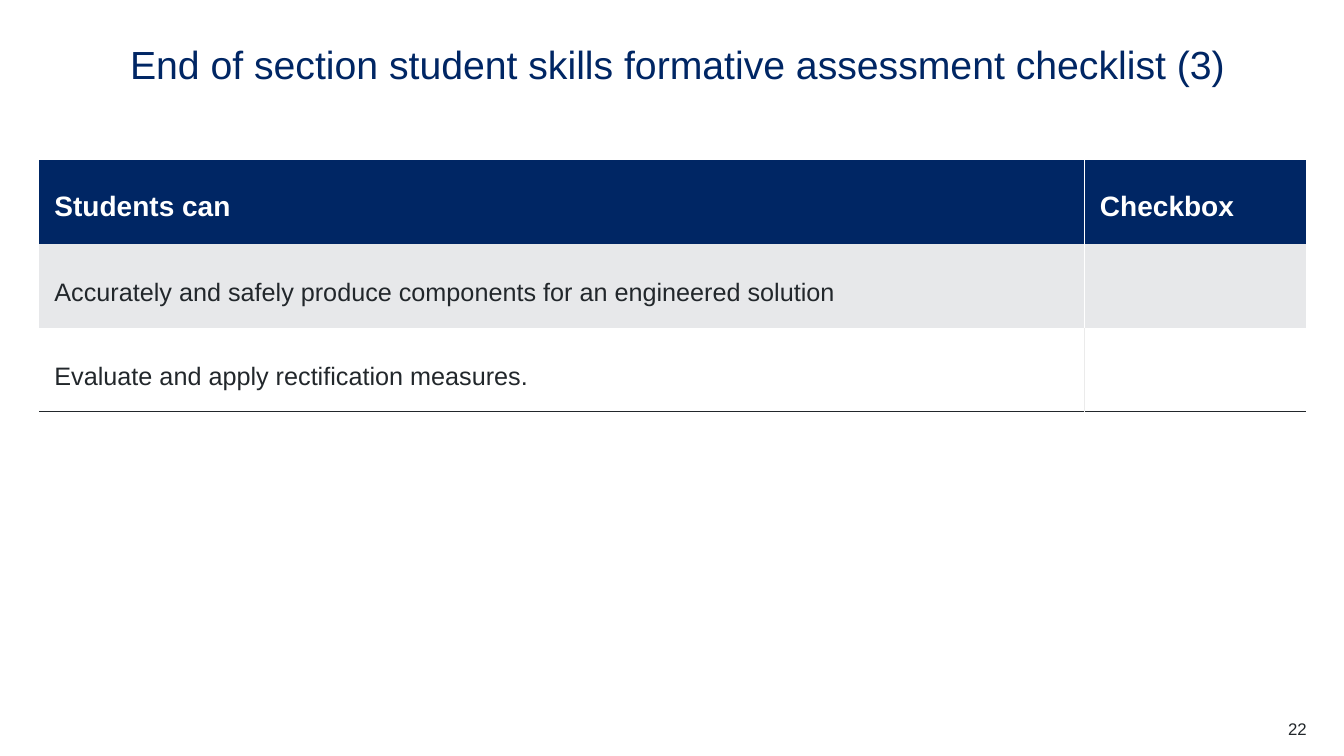
import dataclasses

import pptx
import pptx.dml.color
import pptx.enum.text
import pptx.oxml
import pptx.oxml.ns
import pptx.util
from pptx.util import Inches


@dataclasses.dataclass(frozen=True)
class Theme:
    font: str = "Arial"
    navy: str = "002664"
    ink: str = "22272B"
    band: str = "E7E8EA"
    rule: str = "EBEBEB"
    white: str = "FFFFFF"
    title_size: int = 28
    header_size: int = 20
    body_size: int = 18
    number_size: int = 12


THEME = Theme()
NO_STYLE = "{2D5ABB26-0587-4C30-8999-92F81FD0307C}"
COLUMN_WIDTHS = (10.37, 2.19)
ROW_HEIGHT = 0.83
CELL_MARGIN = 0.15
CHECKLIST = (
    ("Students can", "Checkbox"),
    ("Accurately and safely produce components for an engineered solution", ""),
    ("Evaluate and apply rectification measures.", ""),
)


def rgb(color):
    return pptx.dml.color.RGBColor.from_string(color)


def format_font(font, size, color, bold=False):
    font.name = THEME.font
    font.size = pptx.util.Pt(size)
    font.bold = bold
    font.color.rgb = rgb(color)


def add_text(slide, text, box, size, color, alignment, line_spacing=1.0):
    shape = slide.shapes.add_textbox(*(Inches(length) for length in box))
    frame = shape.text_frame
    frame.word_wrap = True
    frame.margin_left = frame.margin_right = frame.margin_top = frame.margin_bottom = 0
    frame.text = text
    paragraph = frame.paragraphs[0]
    paragraph.alignment = alignment
    paragraph.line_spacing = line_spacing
    format_font(paragraph.runs[0].font, size, color)


def set_borders(cell, borders):
    properties = cell._tc.get_or_add_tcPr()
    namespace = pptx.oxml.ns.nsdecls("a")
    sides = [side for side in "LRTB" if side in borders]
    for position, side in enumerate(sides):
        line = pptx.oxml.parse_xml(
            f'<a:ln{side} {namespace} w="12700"><a:solidFill>'
            f'<a:srgbClr val="{borders[side]}"/></a:solidFill></a:ln{side}>'
        )
        properties.insert(position, line)


def fill_cell(cell, text, fill, size, color, header):
    cell.margin_left = cell.margin_right = Inches(CELL_MARGIN)
    cell.margin_top = cell.margin_bottom = Inches(CELL_MARGIN)
    cell.fill.solid()
    cell.fill.fore_color.rgb = rgb(fill)
    if not text:
        return
    anchors = pptx.enum.text.MSO_ANCHOR
    cell.vertical_anchor = anchors.TOP if header else anchors.MIDDLE
    cell.text_frame.text = text
    paragraph = cell.text_frame.paragraphs[0]
    paragraph.line_spacing = 1.5
    paragraph.space_before = pptx.util.Pt(12 if header else 0)
    paragraph.space_after = pptx.util.Pt(6 if header else 12)
    format_font(paragraph.runs[0].font, size, color, header)


def add_checklist(slide, left, top):
    row_count, column_count = len(CHECKLIST), len(COLUMN_WIDTHS)
    frame = slide.shapes.add_table(
        row_count, column_count, Inches(left), Inches(top),
        Inches(sum(COLUMN_WIDTHS)), Inches(ROW_HEIGHT * row_count),
    )
    table = frame.table
    table.horz_banding = False
    table._tbl.tblPr.find(pptx.oxml.ns.qn("a:tableStyleId")).text = NO_STYLE
    for column, width in zip(table.columns, COLUMN_WIDTHS):
        column.width = Inches(width)
    for row_index, texts in enumerate(CHECKLIST):
        table.rows[row_index].height = Inches(ROW_HEIGHT)
        header = row_index == 0
        last = row_index == row_count - 1
        fill = THEME.navy if header else THEME.band if row_index % 2 else THEME.white
        size = THEME.header_size if header else THEME.body_size
        color = THEME.white if header else THEME.ink
        for column_index, text in enumerate(texts):
            cell = table.cell(row_index, column_index)
            fill_cell(cell, text, fill, size, color, header)
            inner_side = "R" if column_index == 0 else "L"
            borders = {inner_side: THEME.rule if last else THEME.white}
            if last:
                borders["B"] = THEME.ink
            set_borders(cell, borders)


def main():
    presentation = pptx.Presentation()
    presentation.slide_width = Inches(13.33)
    presentation.slide_height = Inches(7.5)
    slide = presentation.slides.add_slide(presentation.slide_layouts[6])
    alignments = pptx.enum.text.PP_ALIGN
    add_text(
        slide, "End of section student skills formative assessment checklist (3)",
        (1.29, 0.45, 11.66, 0.42), THEME.title_size, THEME.navy, alignments.LEFT, 0.9,
    )
    add_checklist(slide, 0.39, 1.59)
    add_text(
        slide, "22", (12.17, 7.13, 0.79, 0.2),
        THEME.number_size, THEME.ink, alignments.RIGHT,
    )
    presentation.save("out.pptx")


if __name__ == "__main__":
    main()
